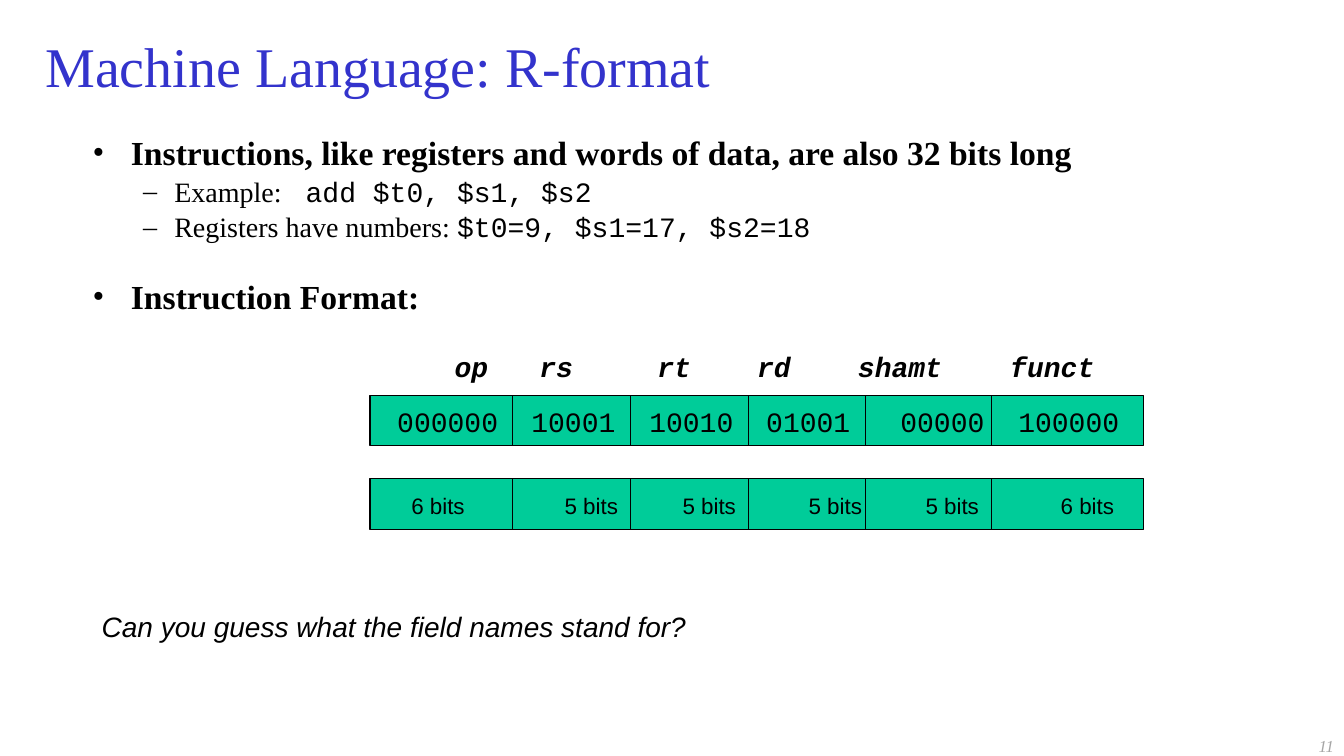
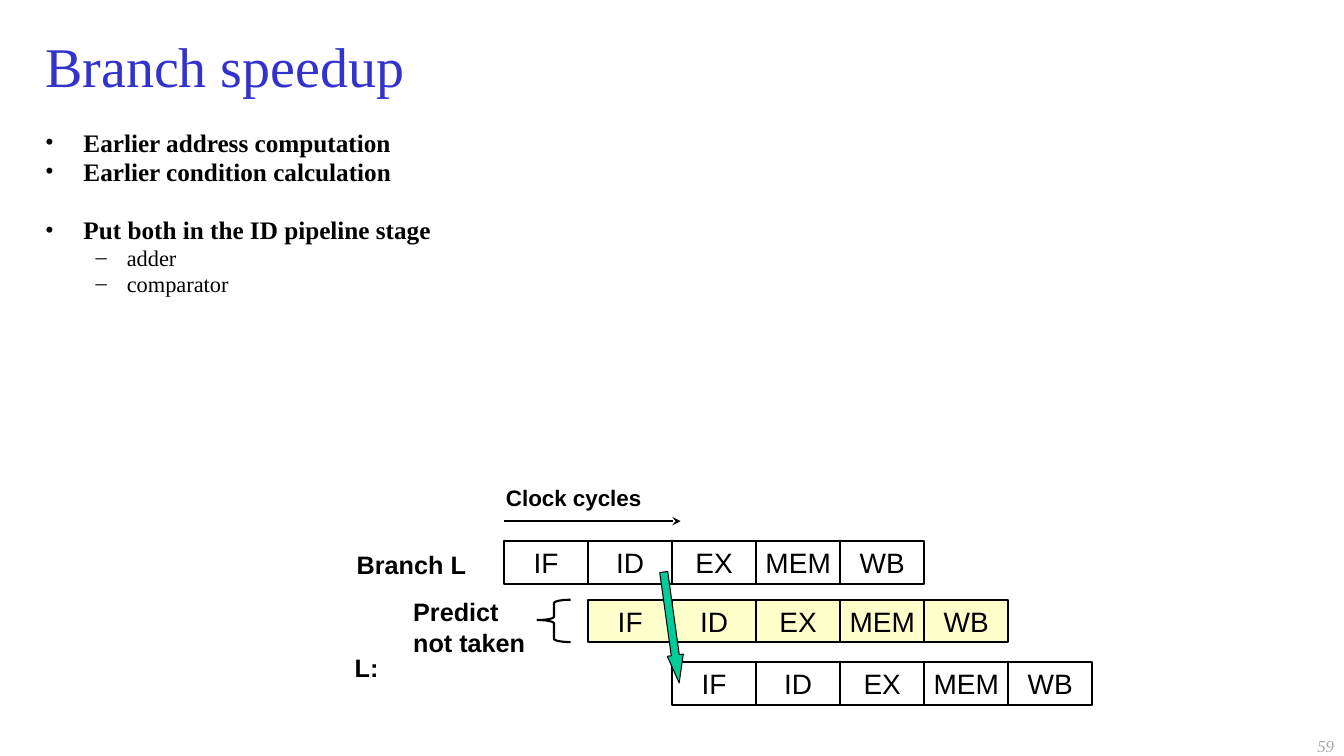
from itertools import accumulate

from lxml.etree import SubElement
from pptx import Presentation
from pptx.dml.color import RGBColor
from pptx.enum.shapes import MSO_CONNECTOR, MSO_SHAPE as Shape
from pptx.enum.text import MSO_ANCHOR as Anchor, PP_ALIGN as Align
from pptx.oxml.ns import qn
from pptx.util import Inches, Pt

BLACK = "000000"
TITLE_BLUE = "3333CC"
PAGE_GRAY = "A6A6A6"
GREEN = "00CC99"
CREAM = "FFFFCC"
SERIF = "Times New Roman"
SANS = "Arial"
MONO = "Courier New"
TITLE_BOX = (0.35, 0.24, 12.64, 0.82)
PAGE_BOX = (10.22, 7.3, 3.11, 0.2)
BULLETS = [("•", 0.38, 0.38), ("–", 0.81, 0.31)]
STAGES = ["IF", "ID", "EX", "MEM", "WB"]
CYCLE = 2.5 / 3
STAGE_HEIGHT = 0.42


def color(value):
    return RGBColor.from_string(value)


def inches(box):
    return [Inches(length) for length in box]


def style(font, name, size, ink=BLACK, bold=False, italic=False):
    font.name = name
    font.size = Pt(size)
    font.color.rgb = color(ink)
    font.bold = bold
    font.italic = italic


def set_frame(frame, anchor=Anchor.TOP, insets=(0.1, 0.05), wrap=True):
    frame.word_wrap = wrap
    frame.vertical_anchor = anchor
    frame.margin_left = frame.margin_right = Inches(insets[0])
    frame.margin_top = frame.margin_bottom = Inches(insets[1])


def add_label(slide, box, text, name, size, align=Align.LEFT, anchor=Anchor.TOP,
              insets=(0.1, 0.05), wrap=False, **look):
    frame = slide.shapes.add_textbox(*inches(box)).text_frame
    set_frame(frame, anchor, insets, wrap)
    paragraph = frame.paragraphs[0]
    paragraph.text = text
    paragraph.alignment = align
    style(paragraph.font, name, size, **look)


def add_outline(slide, preset, box, fill=None, width=0.75):
    shape = slide.shapes.add_shape(preset, *inches(box))
    shape.shadow.inherit = False
    if fill:
        shape.fill.solid()
        shape.fill.fore_color.rgb = color(fill)
    else:
        shape.fill.background()
    shape.line.color.rgb = color(BLACK)
    shape.line.width = Pt(width)
    return shape


def add_line(slide, start, end, width=0.75, tail=None):
    line = slide.shapes.add_connector(MSO_CONNECTOR.STRAIGHT, *inches(start + end))
    line.line.color.rgb = color(BLACK)
    line.line.width = Pt(width)
    properties = line._element.spPr
    if tail:
        SubElement(properties.find(qn("a:ln")), qn("a:tailEnd"), type=tail)
    SubElement(properties, qn("a:effectLst"))


def add_bullets(slide, box, items, sizes, spacing):
    frame = slide.shapes.add_textbox(*inches(box)).text_frame
    set_frame(frame)
    for index, (level, before, parts) in enumerate(items):
        paragraph = frame.add_paragraph() if index else frame.paragraphs[0]
        paragraph.level = level
        paragraph.line_spacing = spacing
        paragraph.space_before = Pt(before)
        style(paragraph.font, SERIF, sizes[level], bold=level == 0)
        for text, name in parts:
            run = paragraph.add_run()
            run.text = text
            if name != SERIF:
                run.font.name = name
        mark, margin, hanging = BULLETS[level]
        properties = paragraph._p.get_or_add_pPr()
        properties.set("marL", str(Inches(margin)))
        properties.set("indent", str(-Inches(hanging)))
        default_run = properties.find(qn("a:defRPr"))
        default_run.addprevious(SubElement(properties, qn("a:buFont"), typeface=SERIF))
        default_run.addprevious(SubElement(properties, qn("a:buChar"), char=mark))


def start_slide(deck, title, page):
    slide = deck.slides.add_slide(deck.slide_layouts[5])
    heading = slide.shapes.title
    heading.left, heading.top, heading.width, heading.height = inches(TITLE_BOX)
    set_frame(heading.text_frame, Anchor.MIDDLE)
    paragraph = heading.text_frame.paragraphs[0]
    paragraph.text = title
    paragraph.alignment = Align.LEFT
    style(paragraph.font, SERIF, 40, TITLE_BLUE)
    add_label(slide, PAGE_BOX, page, SERIF, 12, Align.RIGHT, Anchor.MIDDLE,
              insets=(0.1, 0), wrap=True, ink=PAGE_GRAY, italic=True)
    return slide


def add_instruction_format(slide, left, top):
    widths = [1.41, 1.17, 1.17, 1.16, 1.25, 1.51]
    height = 0.5
    edges = list(accumulate(widths, initial=left))
    rows = [
        (-0.45, ["op", "rs", "rt", "rd", "shamt", "funct"],
         [0.84, 0.27, 0.27, 0.09, -0.07, 0.19], (MONO, 20, True)),
        (0.09, ["000000", "10001", "10010", "01001", "00000", "100000"],
         [0.27, 0.19, 0.19, 0.18, 0.35, 0.27], (MONO, 20, False)),
        (0.96, ["6 bits", "5 bits", "5 bits", "5 bits", "5 bits", "6 bits"],
         [0.41, 0.52, 0.52, 0.6, 0.6, 0.69], (SANS, 16, False)),
    ]
    for band_top in (top, top + 0.83):
        add_outline(slide, Shape.RECTANGLE, (left, band_top, sum(widths), height), GREEN)
        for edge in edges[1:-1]:
            add_line(slide, (edge, band_top), (edge, band_top + height))
    for drop, texts, offsets, (name, size, strong) in rows:
        for text, edge, offset in zip(texts, edges, offsets):
            add_label(slide, (edge + offset, top + drop, 1.2, 0.32), text, name, size,
                      insets=(0, 0), wrap=True, bold=strong, italic=strong)


def build_r_format(deck):
    slide = start_slide(deck, "Machine Language: R-format", "11")
    add_bullets(slide, (0.82, 1.3, 10.95, 1.75), [
        (0, 0, [("Instructions, like registers and words of data, are also 32 bits long", SERIF)]),
        (1, 4, [("Example: ", SERIF), (" add $t0, $s1, $s2", MONO)]),
        (1, 4, [("Registers have numbers: ", SERIF), ("$t0=9, $s1=17, $s2=18", MONO)]),
        (0, 26, [("Instruction Format:", SERIF)]),
    ], (24, 20), 0.9)
    add_instruction_format(slide, 3.67, 3.92)
    add_label(slide, (0.91, 6, 6.75, 0.5), "Can you guess what the field names stand for?",
              SANS, 20, wrap=True, italic=True)


def add_pipeline_row(slide, left, top, fill=None):
    for index, stage in enumerate(STAGES):
        box = (left + index * CYCLE, top, CYCLE, STAGE_HEIGHT)
        cell = add_outline(slide, Shape.RECTANGLE, box, fill, 1.5)
        set_frame(cell.text_frame, Anchor.MIDDLE, (0, 0), wrap=False)
        paragraph = cell.text_frame.paragraphs[0]
        paragraph.text = stage
        paragraph.alignment = Align.CENTER
        style(paragraph.font, SANS, 20)


def add_pipeline_diagram(slide, left, top):
    rows = [(0.62, None), (1.2, CREAM), (1.82, None)]
    for index, (drop, fill) in enumerate(rows):
        add_pipeline_row(slide, left + index * CYCLE, top + drop, fill)
    labels = [
        ((-0.08, 0, 1.8, 0.37), "Clock cycles", 16),
        ((-1.56, 0.65, 1.5, 0.4), "Branch L", 18),
        ((-1, 1.12, 1.33, 0.7), "Predict not taken", 18),
        ((-1.58, 1.67, 0.6, 0.4), "L:", 18),
    ]
    for (x, y, width, height), text, size in labels:
        add_label(slide, (left + x, top + y, width, height), text, SANS, size,
                  anchor=Anchor.MIDDLE, wrap=True, bold=True)
    add_line(slide, (left, top + 0.42), (left + 1.75, top + 0.42), 1.5, "stealth")
    brace = add_outline(slide, Shape.LEFT_BRACE,
                        (left + 0.33, top + 1.2, 0.33, STAGE_HEIGHT), width=1.5)
    brace.adjustments[0], brace.adjustments[1] = 0.1, 0.48
    jump = add_outline(slide, Shape.DOWN_ARROW,
                       (left + 1.58, top + 0.92, 0.16, 1.11), GREEN)
    jump.adjustments[0], jump.adjustments[1] = 0.5, 1.73
    jump.rotation = 352.1


def build_branch_speedup(deck):
    slide = start_slide(deck, "Branch speedup", "59")
    add_bullets(slide, (0.35, 1.27, 12.64, 2), [
        (0, 0, [("Earlier address computation", SERIF)]),
        (0, 3.6, [("Earlier condition calculation", SERIF)]),
        (0, 24.4, [("Put both in the ID pipeline stage", SERIF)]),
        (1, 3.2, [("adder", SERIF)]),
        (1, 3.2, [("comparator", SERIF)]),
    ], (18, 16), 0.8)
    add_pipeline_diagram(slide, 5, 4.75)


def main():
    deck = Presentation()
    deck.slide_width, deck.slide_height = inches((13.33, 7.5))
    build_r_format(deck)
    build_branch_speedup(deck)
    deck.save("out.pptx")


if __name__ == "__main__":
    main()
